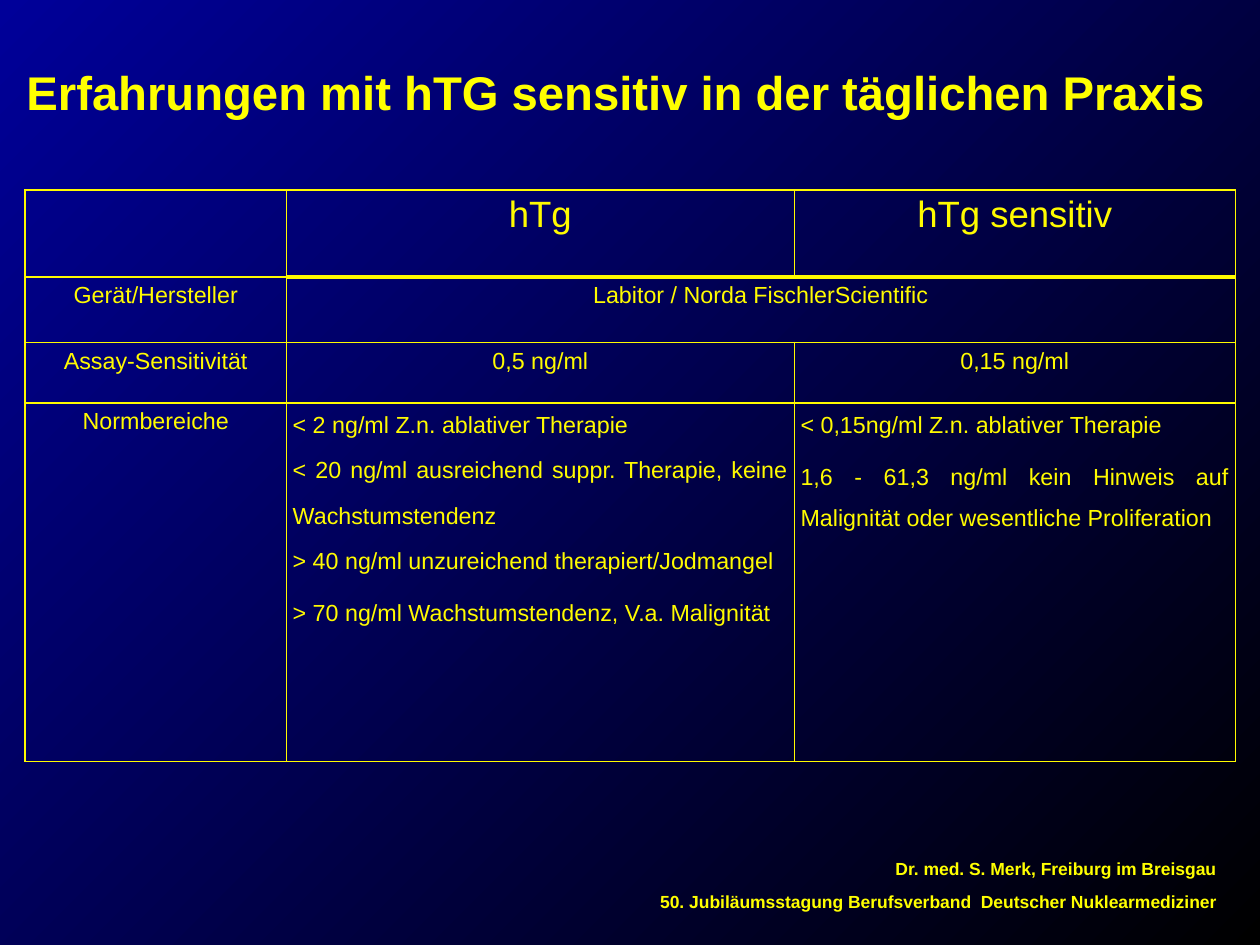
import pptx
import pptx.util
import pptx.dml.color
import pptx.enum.text
import pptx.oxml
import pptx.oxml.ns

Pt = pptx.util.Pt
ALIGN = pptx.enum.text.PP_ALIGN
GOLD = "FFFB00"
YELLOW = "FFFF00"


def color(value):
    return pptx.dml.color.RGBColor.from_string(value)


def write(frame, text, size, fill, bold=False, align=ALIGN.LEFT, before=0,
          spacing=1.0, raised=0, right_indent=0):
    paragraph = frame.paragraphs[0]
    if paragraph.runs:
        paragraph = frame.add_paragraph()
    paragraph.alignment = align
    paragraph.space_before = Pt(before)
    paragraph.line_spacing = spacing
    if right_indent:
        paragraph._p.get_or_add_pPr().set("marR", str(Pt(right_indent)))
    run = paragraph.add_run()
    run.text = text
    run.font.name = "Arial"
    run.font.size = Pt(size)
    run.font.bold = bold
    run.font.color.rgb = color(fill)
    if raised:
        run.font._element.set("baseline", str(raised * 1000))


deck = pptx.Presentation()
deck.slide_width = Pt(720)
deck.slide_height = Pt(540)
slide = deck.slides.add_slide(deck.slide_layouts[6])

backdrop = slide.background.fill
backdrop.gradient()
backdrop.gradient_angle = 135
for stop, shade, position in zip(backdrop.gradient_stops, ("000000", "000099"), (0, 1)):
    stop.color.rgb = color(shade)
    stop.position = position

frames = []
for left, top, width, height in ((141.8, 488.9, 562.3, 36), (11.5, 32.4, 697.7, 37.4)):
    frame = slide.shapes.add_textbox(Pt(left), Pt(top), Pt(width), Pt(height)).text_frame
    frame.word_wrap = True
    frame.margin_left = frame.margin_right = Pt(3.6)
    frame.margin_top = frame.margin_bottom = Pt(3.6)
    frames.append(frame)
footer, title = frames

footer.vertical_anchor = pptx.enum.text.MSO_ANCHOR.BOTTOM
for line, indent in (
    ("Dr. med. S. Merk, Freiburg im Breisgau", 5.6),
    ("50. Jubiläumsstagung Berufsverband  Deutscher Nuklearmediziner", 0),
):
    write(footer, line, size=10, fill=YELLOW, bold=True, align=ALIGN.RIGHT,
          before=7, right_indent=indent)
write(title, "Erfahrungen mit hTG sensitiv in der täglichen Praxis",
      size=27, fill=YELLOW, bold=True)

column_widths = (149.3, 290.2, 252)
row_heights = (49.7, 37.4, 34.6, 205)
assays = slide.shapes.add_table(4, 3, Pt(14.4), Pt(108.6), Pt(sum(column_widths)),
                                Pt(sum(row_heights))).table
assays.first_row = False
assays.horz_banding = False
for column, width in zip(assays.columns, column_widths):
    column.width = Pt(width)
for row, height in zip(assays.rows, row_heights):
    row.height = Pt(height)
assays.cell(1, 1).merge(assays.cell(1, 2))

contents = (
    ("", "hTg", "hTg sensitiv"),
    ("Gerät/Hersteller", "Labitor / Norda FischlerScientific", ""),
    ("Assay-Sensitivität", "0,5 ng/ml", "0,15 ng/ml"),
    ("Normbereiche", "", ""),
)
for r, entries in enumerate(contents):
    for c, entry in enumerate(entries):
        cell = assays.cell(r, c)
        cell.margin_left = cell.margin_right = Pt(3.6)
        cell.margin_top = cell.margin_bottom = Pt(3.6)
        for side in "LRTB":
            heavy = c > 0 and (r, side) in ((0, "B"), (1, "T"))
            cell._tc.get_or_add_tcPr().append(pptx.oxml.parse_xml(
                f'<a:ln{side} {pptx.oxml.ns.nsdecls("a")} w="{Pt(2.25 if heavy else 1)}">'
                f'<a:solidFill><a:srgbClr val="{GOLD}"/></a:solidFill></a:ln{side}>'))
        cell.fill.background()
        if entry:
            write(cell.text_frame, entry, size=36 if r == 0 else 23, fill=GOLD,
                  align=ALIGN.CENTER, before=6, spacing=0.9, raised=31 if r == 0 else 30)

norm_ranges = (
    (1, "< 2 ng/ml Z.n. ablativer Therapie", 6, 1.0),
    (1, "< 20 ng/ml ausreichend suppr. Therapie, keine Wachstumstendenz", 0, 1.0),
    (1, "> 40 ng/ml unzureichend therapiert/Jodmangel", 0, 1.0),
    (1, "> 70 ng/ml Wachstumstendenz, V.a. Malignität", 6, 0.9),
    (2, "< 0,15ng/ml Z.n. ablativer Therapie", 6, 1.0),
    (2, "1,6 - 61,3 ng/ml kein Hinweis auf Malignität oder wesentliche Proliferation", 6, 0.9),
)
for c, norm, before, spacing in norm_ranges:
    write(assays.cell(3, c).text_frame, norm, size=23, fill=GOLD, align=ALIGN.JUSTIFY,
          before=before, spacing=spacing, raised=30)

deck.save("out.pptx")
